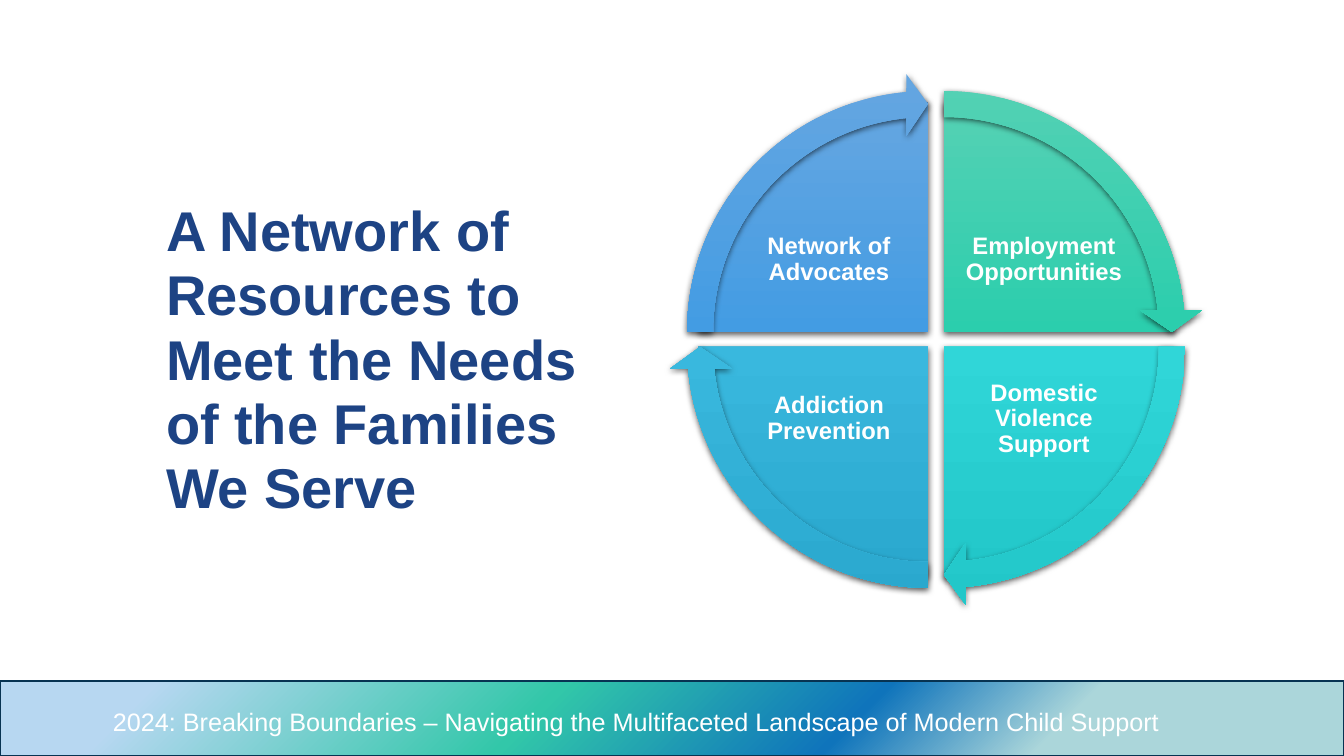
"""Builds a slide with a four-part cycle of family resources."""
from lxml import etree
from pptx import Presentation
from pptx import util as u
from pptx.dml.color import RGBColor
from pptx.enum import shapes, text
from pptx.oxml.ns import qn

PX = 914400 / 100.8
COLOURS = {"white": "FFFFFF", "navy": "1D4384", "edge": "073352", "shadow": "000000"}
BAR_STOPS = [(11, "B7D7F1"), (40, "32C7A9"), (63, "0F74BB"), (78, "ABD6DA")]
LEFT, RIGHT, UPPER, LOWER = 928, 944, 332, 347
PIE_RADIUS, ARROW_RADIUS = 230, 259
LABEL_WIDTH, LABEL_HEIGHT = 170, 126
QUARTER = 54
QUADRANTS = [
    ("Employment Opportunities", RIGHT, UPPER, 162, ("55D1B4", "2BCEAD", "1FBE9E")),
    ("Domestic Violence Support", RIGHT, LOWER, 0, ("5AD5D7", "30D6D8", "22C7C9")),
    ("Addiction Prevention", LEFT, LOWER, 54, ("5FBCDC", "39B8DE", "2AA8CE")),
    ("Network of Advocates", LEFT, UPPER, 108, ("65A6E1", "439CE3", "338BD2")),
]


def px(value):
    return round(value * PX)


class SlideBuilder:
    """Holds the style and the current page."""

    def __init__(self, deck, font="Arial"):
        self.font = font
        self.page = deck.slides.add_slide(deck.slide_layouts[5])

    def shape(self, kind, left, top, width, height, stops, angle):
        shape = self.page.shapes.add_shape(kind, px(left), px(top), px(width), px(height))
        shape.shadow.inherit = False
        shape.line.fill.background()
        shape.fill.gradient()
        shape.fill.gradient_angle = 360 - angle
        stop_list = shape._element.spPr.find(".//" + qn("a:gsLst"))
        for old in list(stop_list):
            stop_list.remove(old)
        for position, colour in stops:
            stop = etree.SubElement(stop_list, qn("a:gs"), pos=str(position * 1000))
            etree.SubElement(stop, qn("a:srgbClr"), val=colour)
        return shape

    def sector(self, kind, centre_x, centre_y, radius, colours, adjustments):
        size = 2 * radius
        shape = self.shape(kind, centre_x - radius, centre_y - radius, size, size,
                           zip((0, 50, 100), colours), 90)
        for index, value in enumerate(adjustments):
            shape.adjustments[index] = value
        effects = shape._element.spPr.find(qn("a:effectLst"))
        shadow = etree.SubElement(effects, qn("a:outerShdw"), blurRad=str(int(u.Pt(4.5))),
                                  dist=str(int(u.Pt(1.5))), dir="5400000",
                                  algn="ctr", rotWithShape="0")
        colour = etree.SubElement(shadow, qn("a:srgbClr"), val=COLOURS["shadow"])
        etree.SubElement(colour, qn("a:alpha"), val="63000")

    def set_words(self, box, words, size, colour, bold=False, align=text.PP_ALIGN.LEFT,
                  anchor=text.MSO_ANCHOR.TOP, spacing=None):
        frame = box.text_frame
        frame.text = words
        frame.word_wrap = True
        frame.vertical_anchor = anchor
        para = frame.paragraphs[0]
        para.alignment = align
        if spacing:
            para.line_spacing = spacing
        span = para.runs[0]
        span.font.name = self.font
        span.font.size = u.Pt(size)
        span.font.bold = bold
        span.font.color.rgb = RGBColor.from_string(COLOURS[colour])
        return frame

    def textbox(self, left, top, width, height, words, size, **style):
        box = self.page.shapes.add_textbox(px(left), px(top), px(width), px(height))
        return self.set_words(box, words, size, "white", **style)

    def label(self, left, top, words):
        frame = self.textbox(left, top, LABEL_WIDTH, LABEL_HEIGHT, words, 17, bold=True,
                             align=text.PP_ALIGN.CENTER, anchor=text.MSO_ANCHOR.MIDDLE,
                             spacing=0.9)
        frame.margin_left = frame.margin_right = px(2)
        frame.margin_top = frame.margin_bottom = px(2)

    def title(self, left, top, width, height, words):
        box = self.page.shapes.title
        box.left, box.top, box.width, box.height = map(px, (left, top, width, height))
        frame = self.set_words(box, words, 40, "navy", bold=True, spacing=u.Pt(46))
        frame.auto_size = text.MSO_AUTO_SIZE.SHAPE_TO_FIT_TEXT

    def footer(self, words):
        bar = self.shape(shapes.MSO_SHAPE.RECTANGLE, 0, 681, 1344, 75, BAR_STOPS, 45)
        bar.line.color.rgb = RGBColor.from_string(COLOURS["edge"])
        bar.line.width = u.Pt(1)
        self.textbox(103, 701, 1099, 40, words, 18)


def main():
    deck = Presentation()
    deck.slide_width, deck.slide_height = px(1344), px(756)
    slide = SlideBuilder(deck)
    slide.footer("2024: Breaking Boundaries – Navigating the Multifaceted Landscape "
                 "of Modern Child Support")
    slide.title(156, 193, 458, 336,
                "A Network of Resources to Meet the Needs of the Families We Serve")
    for words, x, y, start, colours in QUADRANTS:
        end = (start + QUARTER) % (4 * QUARTER)
        slide.sector(shapes.MSO_SHAPE.PIE, x, y, PIE_RADIUS, colours, (start, end))
        label_left = x + 15 if x == RIGHT else x - 14 - LABEL_WIDTH
        label_top = y + 9 if y == LOWER else y - 9 - LABEL_HEIGHT
        slide.label(label_left, label_top, words)
    for words, x, y, start, colours in QUADRANTS:
        slide.sector(shapes.MSO_SHAPE.CIRCULAR_ARROW, x, y, ARROW_RADIUS, colours,
                     (0.05, 3.28, start + QUARTER - 3.28, start, 0.06))
    deck.save("out.pptx")


if __name__ == "__main__":
    main()
